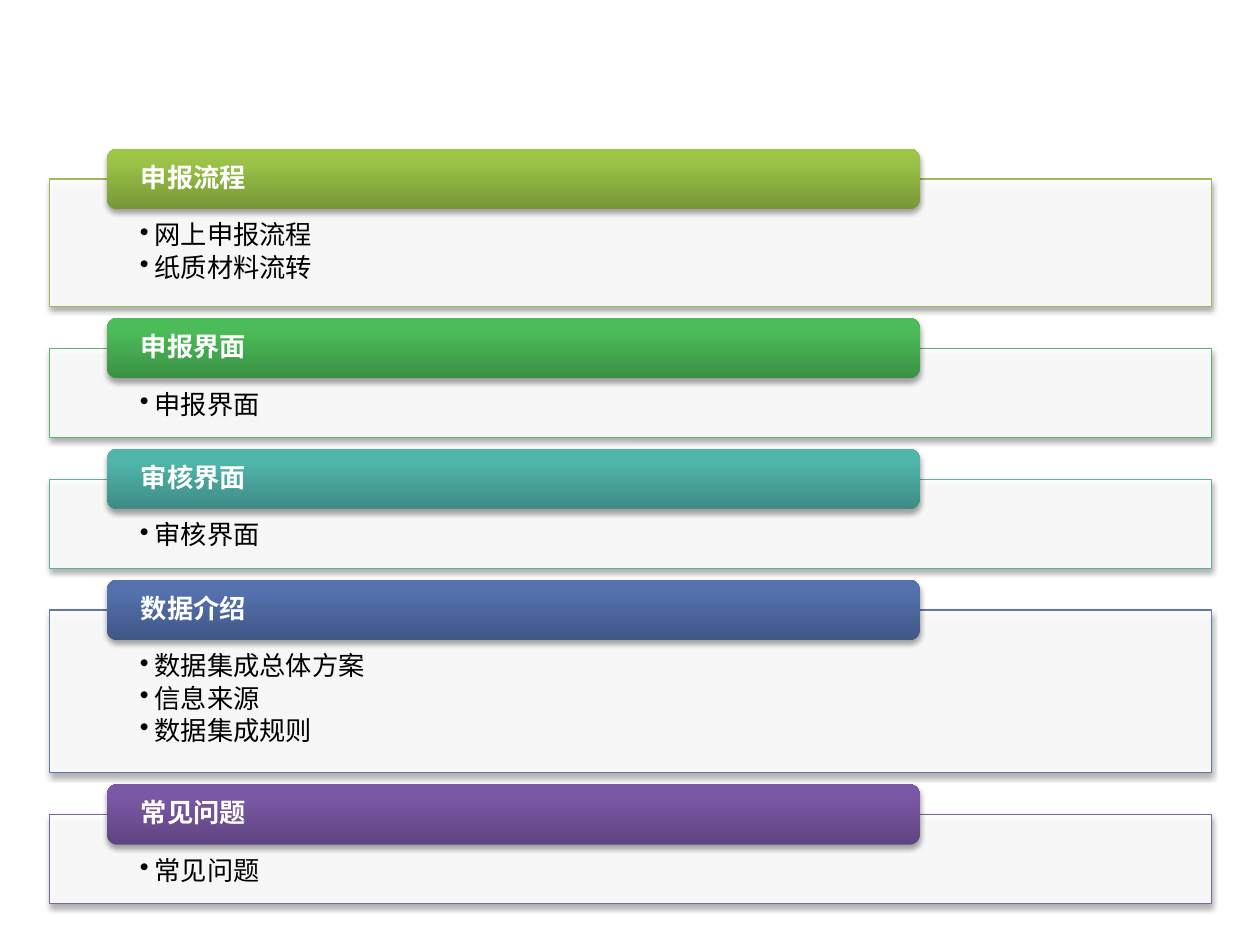
from dataclasses import dataclass

import pptx
import pptx.dml.color
import pptx.enum.shapes
import pptx.enum.text
import pptx.oxml
import pptx.oxml.ns
import pptx.shapes.autoshape
import pptx.slide
import pptx.text.text
import pptx.util
from pptx.dml.color import RGBColor
from pptx.util import Cm

WHITE = RGBColor(0xFF, 0xFF, 0xFF)
BLACK = RGBColor(0x00, 0x00, 0x00)
LIME = RGBColor(0x9B, 0xBB, 0x59)
LIME_DARK = RGBColor(0x77, 0x97, 0x37)
LIME_MID = RGBColor(0x9B, 0xC3, 0x48)
LIME_LIGHT = RGBColor(0x9D, 0xC7, 0x46)
GREEN = RGBColor(0x5C, 0xB5, 0x65)
GREEN_DARK = RGBColor(0x3A, 0x91, 0x44)
GREEN_MID = RGBColor(0x4C, 0xBC, 0x58)
GREEN_LIGHT = RGBColor(0x4A, 0xBF, 0x57)
TEAL = RGBColor(0x5E, 0xAF, 0xA6)
TEAL_DARK = RGBColor(0x3D, 0x8B, 0x83)
TEAL_MID = RGBColor(0x50, 0xB5, 0xAA)
TEAL_LIGHT = RGBColor(0x4E, 0xB8, 0xAC)
BLUE = RGBColor(0x61, 0x79, 0xA8)
BLUE_DARK = RGBColor(0x40, 0x57, 0x86)
BLUE_MID = RGBColor(0x54, 0x71, 0xAE)
BLUE_LIGHT = RGBColor(0x52, 0x71, 0xB0)
PURPLE = RGBColor(0x80, 0x64, 0xA2)
PURPLE_DARK = RGBColor(0x5F, 0x44, 0x80)
PURPLE_MID = RGBColor(0x7B, 0x58, 0xA6)
PURPLE_LIGHT = RGBColor(0x7C, 0x57, 0xA8)

PANEL_LEFT, PANEL_WIDTH = Cm(1), Cm(23.42)
HEADING_LEFT, HEADING_WIDTH, HEADING_HEIGHT = Cm(2.16), Cm(16.38), Cm(1.22)
FIRST_PANEL_TOP, PANEL_GAP = Cm(3.61), Cm(0.84)
TEXT_SIZE = pptx.util.Pt(15)
NS = pptx.oxml.ns.nsdecls("a")


@dataclass
class Section:
    heading: str
    topics: list[str]
    height: float
    outline: RGBColor
    gradient: tuple[RGBColor, RGBColor, RGBColor]
    heading_font: str = "Calibri"
    topic_font: str = "Calibri"


SECTIONS = [
    Section("申报流程", ["网上申报流程", "纸质材料流转"], 2.57, LIME,
            (LIME_DARK, LIME_MID, LIME_LIGHT), topic_font="Arial"),
    Section("申报界面", ["申报界面"], 1.8, GREEN,
            (GREEN_DARK, GREEN_MID, GREEN_LIGHT)),
    Section("审核界面", ["审核界面"], 1.8, TEAL,
            (TEAL_DARK, TEAL_MID, TEAL_LIGHT)),
    Section("数据介绍", ["数据集成总体方案", "信息来源", "数据集成规则"], 3.28, BLUE,
            (BLUE_DARK, BLUE_MID, BLUE_LIGHT)),
    Section("常见问题", ["常见问题"], 1.8, PURPLE,
            (PURPLE_DARK, PURPLE_MID, PURPLE_LIGHT), heading_font="Arial"),
]


def add_shadow(shape: pptx.shapes.autoshape.Shape) -> None:
    shape.shadow.inherit = False
    effects = shape.element.spPr.find(pptx.oxml.ns.qn("a:effectLst"))
    effects.append(pptx.oxml.parse_xml(
        f'<a:outerShdw {NS} blurRad="40000" dist="23000" dir="5400000" rotWithShape="0">'
        '<a:srgbClr val="000000"><a:alpha val="35000"/></a:srgbClr></a:outerShdw>'))


def fill_gradient(shape: pptx.shapes.autoshape.Shape, colours: tuple[RGBColor, ...]) -> None:
    stops = "".join(
        f'<a:gs pos="{position}"><a:srgbClr val="{colour}"/></a:gs>'
        for position, colour in zip((0, 80000, 100000), colours))
    outline = shape.element.spPr.find(pptx.oxml.ns.qn("a:ln"))
    outline.addprevious(pptx.oxml.parse_xml(
        f'<a:gradFill {NS} rotWithShape="1"><a:gsLst>{stops}</a:gsLst>'
        '<a:lin ang="16200000" scaled="0"/></a:gradFill>'))


def set_frame(frame: pptx.text.text.TextFrame, side: float, top: float, bottom: float,
              anchor: pptx.enum.text.MSO_ANCHOR) -> None:
    frame.word_wrap = True
    frame.margin_left = frame.margin_right = Cm(side)
    frame.margin_top, frame.margin_bottom = Cm(top), Cm(bottom)
    frame.vertical_anchor = anchor


def write_line(paragraph: pptx.text.text._Paragraph, text: str, font: str,
               colour: RGBColor, space_after: int, bulleted: bool) -> None:
    paragraph.alignment = pptx.enum.text.PP_ALIGN.LEFT
    paragraph.line_spacing = 0.9
    properties = paragraph._p.get_or_add_pPr()
    properties.append(pptx.oxml.parse_xml(
        f'<a:spcAft {NS}><a:spcPct val="{space_after}"/></a:spcAft>'))
    if bulleted:
        paragraph.level = 1
        properties.set("marL", str(Cm(0.3)))
        properties.set("indent", str(-Cm(0.3)))
        properties.append(pptx.oxml.parse_xml(f'<a:buChar {NS} char="•"/>'))
    run = paragraph.add_run()
    run.text = text
    run.font.name = font
    run.font.size = TEXT_SIZE
    run.font.bold = not bulleted
    run.font.color.rgb = colour


def draw_panel(slide: pptx.slide.Slide, section: Section, top: int) -> None:
    panel = slide.shapes.add_shape(
        pptx.enum.shapes.MSO_SHAPE.RECTANGLE,
        PANEL_LEFT, top, PANEL_WIDTH, Cm(section.height))
    panel.fill.solid()
    panel.fill.fore_color.rgb = WHITE
    white = panel.element.spPr.find(".//" + pptx.oxml.ns.qn("a:srgbClr"))
    white.append(pptx.oxml.parse_xml(f'<a:alpha {NS} val="90000"/>'))
    panel.line.color.rgb = section.outline
    panel.line.width = pptx.util.Pt(0.75)
    add_shadow(panel)
    frame = panel.text_frame
    set_frame(frame, 1.82, 0.87, 0.3, pptx.enum.text.MSO_ANCHOR.TOP)
    for index, topic in enumerate(section.topics):
        paragraph = frame.add_paragraph() if index else frame.paragraphs[0]
        write_line(paragraph, topic, section.topic_font, BLACK, 15000, True)


def draw_heading(slide: pptx.slide.Slide, section: Section, panel_top: int) -> None:
    heading = slide.shapes.add_shape(
        pptx.enum.shapes.MSO_SHAPE.ROUNDED_RECTANGLE,
        HEADING_LEFT, panel_top - HEADING_HEIGHT // 2, HEADING_WIDTH, HEADING_HEIGHT)
    heading.line.fill.background()
    fill_gradient(heading, section.gradient)
    add_shadow(heading)
    frame = heading.text_frame
    set_frame(frame, 0.62, 0, 0, pptx.enum.text.MSO_ANCHOR.MIDDLE)
    write_line(frame.paragraphs[0], section.heading, section.heading_font,
               WHITE, 35000, False)


def main() -> None:
    presentation = pptx.Presentation()
    presentation.slide_width, presentation.slide_height = Cm(25.4), Cm(19.05)
    slide = presentation.slides.add_slide(presentation.slide_layouts[6])
    top = FIRST_PANEL_TOP
    for section in SECTIONS:
        draw_panel(slide, section, top)
        draw_heading(slide, section, top)
        top += Cm(section.height) + PANEL_GAP
    presentation.save("out.pptx")


if __name__ == "__main__":
    main()
